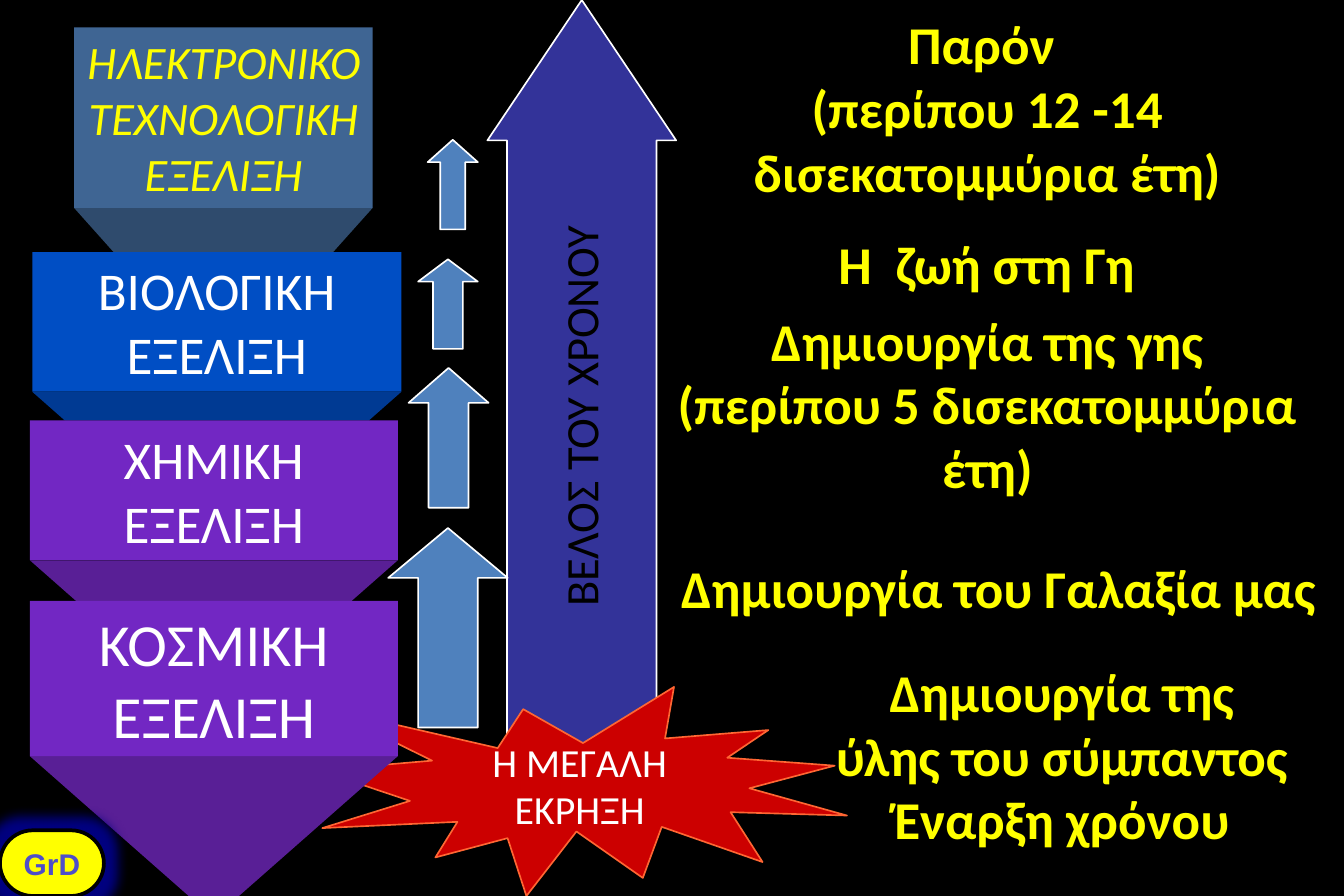
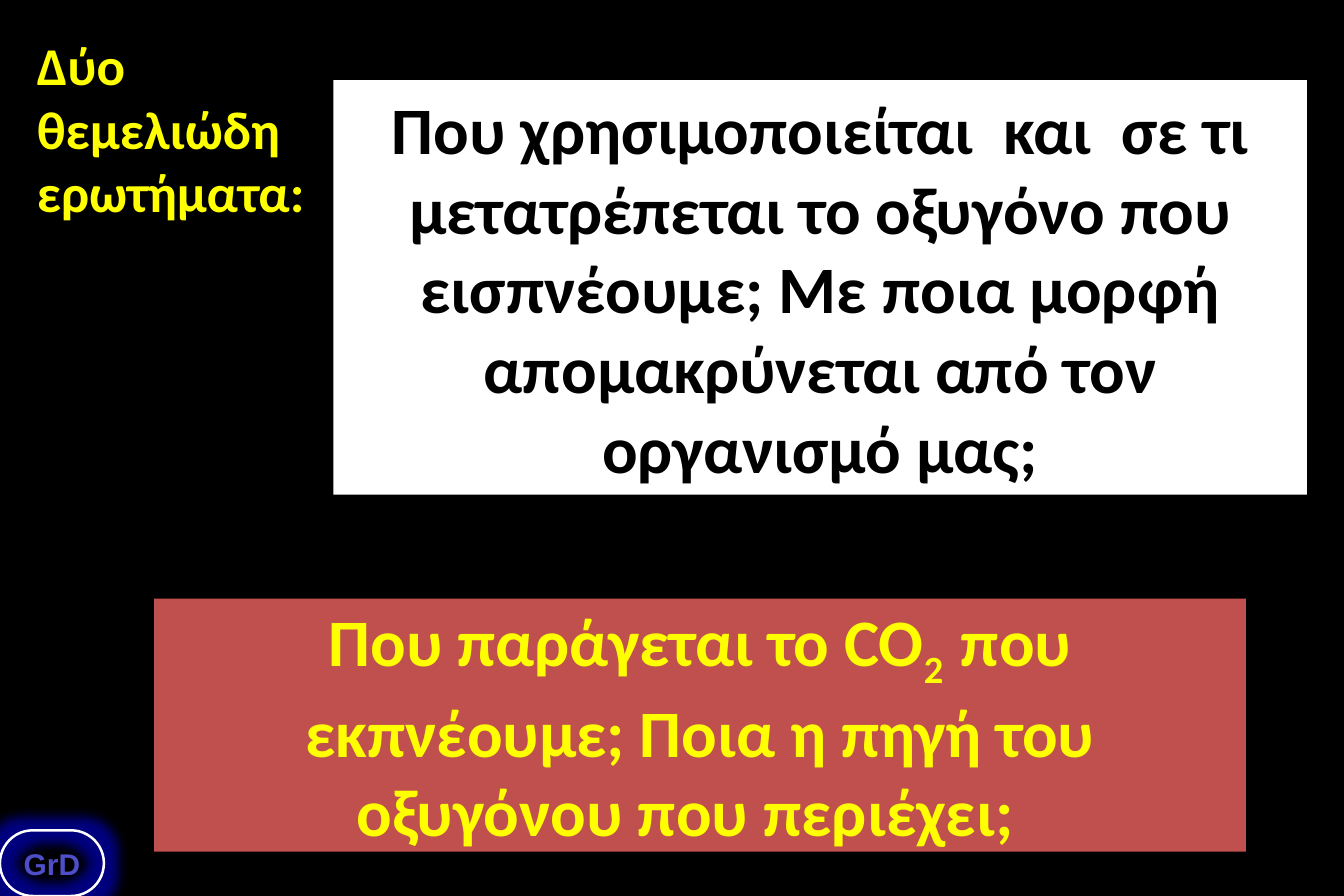
from lxml import etree
from pptx import Presentation
from pptx.dml.color import RGBColor
from pptx.enum.shapes import MSO_SHAPE
from pptx.enum.text import MSO_ANCHOR, PP_ALIGN
from pptx.oxml.ns import qn
from pptx.util import Inches, Pt

RECTANGLE = MSO_SHAPE.RECTANGLE
ROUNDED = MSO_SHAPE.ROUNDED_RECTANGLE
UP_ARROW = MSO_SHAPE.UP_ARROW
BURST = MSO_SHAPE.EXPLOSION1
CENTER, LEFT = PP_ALIGN.CENTER, PP_ALIGN.LEFT
TOP, MIDDLE = MSO_ANCHOR.TOP, MSO_ANCHOR.MIDDLE

BLACK = RGBColor(0x00, 0x00, 0x00)
WHITE = RGBColor(0xFF, 0xFF, 0xFF)
YELLOW = RGBColor(0xFF, 0xFF, 0x00)
STEEL = RGBColor(0x3F, 0x65, 0x93)
STEEL_SIDE = RGBColor(0x2F, 0x4B, 0x6D)
BLUE = RGBColor(0x00, 0x4E, 0xC4)
BLUE_SIDE = RGBColor(0x00, 0x3A, 0x93)
PURPLE = RGBColor(0x72, 0x27, 0xC3)
PURPLE_SIDE = RGBColor(0x59, 0x1F, 0x96)
ARROW_BLUE = RGBColor(0x4F, 0x81, 0xBD)
TIME_BLUE = RGBColor(0x33, 0x33, 0x99)
RED = RGBColor(0xCC, 0x00, 0x00)
ORANGE = RGBColor(0xFF, 0x66, 0x33)
BRICK = RGBColor(0xC0, 0x50, 0x4D)
BADGE_TEXT = RGBColor(0x4E, 0x4E, 0xC9)
GLOW = RGBColor(0x00, 0x00, 0x80)

SUBSCRIPT_MARK = "|"


def paint(shape, fill, line=None, line_width=1):
    shape.shadow.inherit = False
    if fill is None:
        shape.fill.background()
    else:
        shape.fill.solid()
        shape.fill.fore_color.rgb = fill
    if line is None:
        shape.line.fill.background()
    else:
        shape.line.color.rgb = line
        shape.line.width = Pt(line_width)


def write(shape, lines, size, color, bold=False, italic=False, font="Calibri",
          align=CENTER, anchor=TOP, wrap=True):
    """Fill a shape with one paragraph per line; text between marks is subscript."""
    frame = shape.text_frame
    frame.word_wrap = wrap
    frame.vertical_anchor = anchor
    for index, line in enumerate(lines):
        paragraph = frame.add_paragraph() if index else frame.paragraphs[0]
        paragraph.alignment = align
        for position, part in enumerate(line.split(SUBSCRIPT_MARK)):
            run = paragraph.add_run()
            run.text = part
            run.font.name = font
            run.font.size = Pt(size)
            run.font.bold = bold
            run.font.italic = italic
            run.font.color.rgb = color
            if position % 2:
                run.font._element.set("baseline", "-25000")


def add_preset(slide, kind, box, fill, line=None, line_width=1, adjustments=()):
    shape = slide.shapes.add_shape(kind, *map(Inches, box))
    for index, value in enumerate(adjustments):
        shape.adjustments[index] = value
    paint(shape, fill, line, line_width)
    return shape


def add_label(slide, box, lines, size=32, color=YELLOW, bold=True, **options):
    label = slide.shapes.add_textbox(*map(Inches, box))
    write(label, lines, size, color, bold, **options)
    return label


def add_block(slide, box, depth, slope, fill, side_fill, text, size,
              color=WHITE, italic=False):
    """Draw a block whose underside narrows with depth."""
    left, top, width, height = box
    bottom, inset = top + height, depth / slope
    builder = slide.shapes.build_freeform(Inches(left), Inches(bottom))
    builder.add_line_segments([
        (Inches(left + width), Inches(bottom)),
        (Inches(left + width - inset), Inches(bottom + depth)),
        (Inches(left + inset), Inches(bottom + depth)),
    ])
    paint(builder.convert_to_shape(), side_fill)
    write(add_preset(slide, RECTANGLE, box, fill), [text], size, color, italic=italic)


def add_badge(slide, fill, line, line_width):
    badge = add_preset(slide, ROUNDED, (0, 6.95, 0.87, 0.55), fill, line, line_width, [0.5])
    write(badge, ["GrD"], 18, BADGE_TEXT, bold=True, font="Arial", anchor=MIDDLE)
    effects = badge._element.spPr.find(qn("a:effectLst"))
    glow = etree.SubElement(effects, qn("a:glow"), rad=str(Inches(0.2)))
    etree.SubElement(glow, qn("a:srgbClr"), val=str(GLOW))


def add_slide(presentation):
    slide = presentation.slides.add_slide(presentation.slide_layouts[6])
    slide.background.fill.solid()
    slide.background.fill.fore_color.rgb = BLACK
    return slide


def build_timeline(presentation):
    slide = add_slide(presentation)
    add_preset(slide, UP_ARROW, (4.08, 0, 1.58, 6.25), TIME_BLUE, WHITE,
               adjustments=(0.792, 0.744))
    burst = add_preset(slide, BURST, (2.67, 5.75, 4.42, 1.75), RED, ORANGE)
    write(burst, ["Η ΜΕΓΑΛΗ", "ΕΚΡΗΞΗ"], 24, WHITE, anchor=MIDDLE, wrap=False)
    time_label = add_label(slide, (2.7, 3.2, 4.31, 0.57), ["ΒΕΛΟΣ ΤΟΥ ΧΡΟΝΟΥ"],
                           28, BLACK, bold=False)
    time_label.rotation = 270

    add_label(slide, (6.88, 5.47, 4.02, 1.72),
              ["Δημιουργία της", "ύλης του σύμπαντος", "Έναρξη χρόνου"], wrap=False)
    for box, lines in (
        ((5.47, 4.6, 5.78, 0.64), ["Δημιουργία του Γαλαξία μας"]),
        ((5.47, 2.53, 5.59, 1.72), ["Δημιουργία της γης", "(περίπου 5 δισεκατομμύρια έτη)"]),
        ((6.61, 1.89, 3.3, 0.64), ["Η  ζωή στη Γη"]),
        ((5.87, 0.05, 4.79, 1.72), ["Παρόν ", "(περίπου 12 -14 δισεκατομμύρια έτη)"]),
    ):
        add_label(slide, box, lines)

    add_block(slide, (0.62, 0.23, 2.5, 1.51), 0.37, 1.12, STEEL, STEEL_SIDE,
              "ΗΛΕΚΤΡΟΝΙΚΟΤΕΧΝΟΛΟΓΙΚΗ ΕΞΕΛΙΞΗ", 28, YELLOW, italic=True)
    add_block(slide, (0.27, 2.11, 3.09, 1.17), 0.24, 0.88, BLUE, BLUE_SIDE,
              "ΒΙΟΛΟΓΙΚΗ ΕΞΕΛΙΞΗ", 32)
    add_block(slide, (0.25, 3.52, 3.08, 1.17), 0.34, 0.88, PURPLE, PURPLE_SIDE,
              "ΧΗΜΙΚΗ ΕΞΕΛΙΞΗ", 32)
    add_block(slide, (0.25, 5.03, 3.08, 1.3), 1.17, 0.88, PURPLE, PURPLE_SIDE,
              "ΚΟΣΜΙΚΗ ΕΞΕΛΙΞΗ", 36)

    for left, top, width, height in (
        (3.58, 1.17, 0.42, 0.75),
        (3.5, 2.17, 0.5, 0.75),
        (3.42, 3.08, 0.67, 1.17),
        (3.25, 4.42, 1, 1.67),
    ):
        head = 0.25 * height / width
        add_preset(slide, UP_ARROW, (left, top, width, height), ARROW_BLUE, WHITE,
                   adjustments=(0.5, head))
    add_badge(slide, YELLOW, BLACK, 2.25)


def build_questions(presentation):
    slide = add_slide(presentation)
    oxygen = add_preset(slide, RECTANGLE, (2.79, 0.67, 8.15, 3.47), WHITE)
    write(oxygen, ["Που χρησιμοποιείται  και  σε τι μετατρέπεται το οξυγόνο που "
                   "εισπνέουμε; Με ποια μορφή απομακρύνεται από τον οργανισμό μας;"],
          40, BLACK, bold=True, anchor=MIDDLE)
    carbon_dioxide = add_preset(slide, RECTANGLE, (1.29, 5.01, 9.14, 2.12), BRICK)
    write(carbon_dioxide, ["Που παράγεται το CO|2  |που εκπνέουμε; Ποια η πηγή του "
                           "οξυγόνου που περιέχει;  "],
          40, YELLOW, bold=True, anchor=MIDDLE)
    add_label(slide, (0.21, 0.22, 2.47, 1.72), ["Δύο", "θεμελιώδη", "ερωτήματα:"],
              align=LEFT, wrap=False)
    add_badge(slide, None, WHITE, 1.5)


def main():
    presentation = Presentation()
    presentation.slide_width = Inches(11.25)
    presentation.slide_height = Inches(7.5)
    build_timeline(presentation)
    build_questions(presentation)
    presentation.save("out.pptx")


if __name__ == "__main__":
    main()
